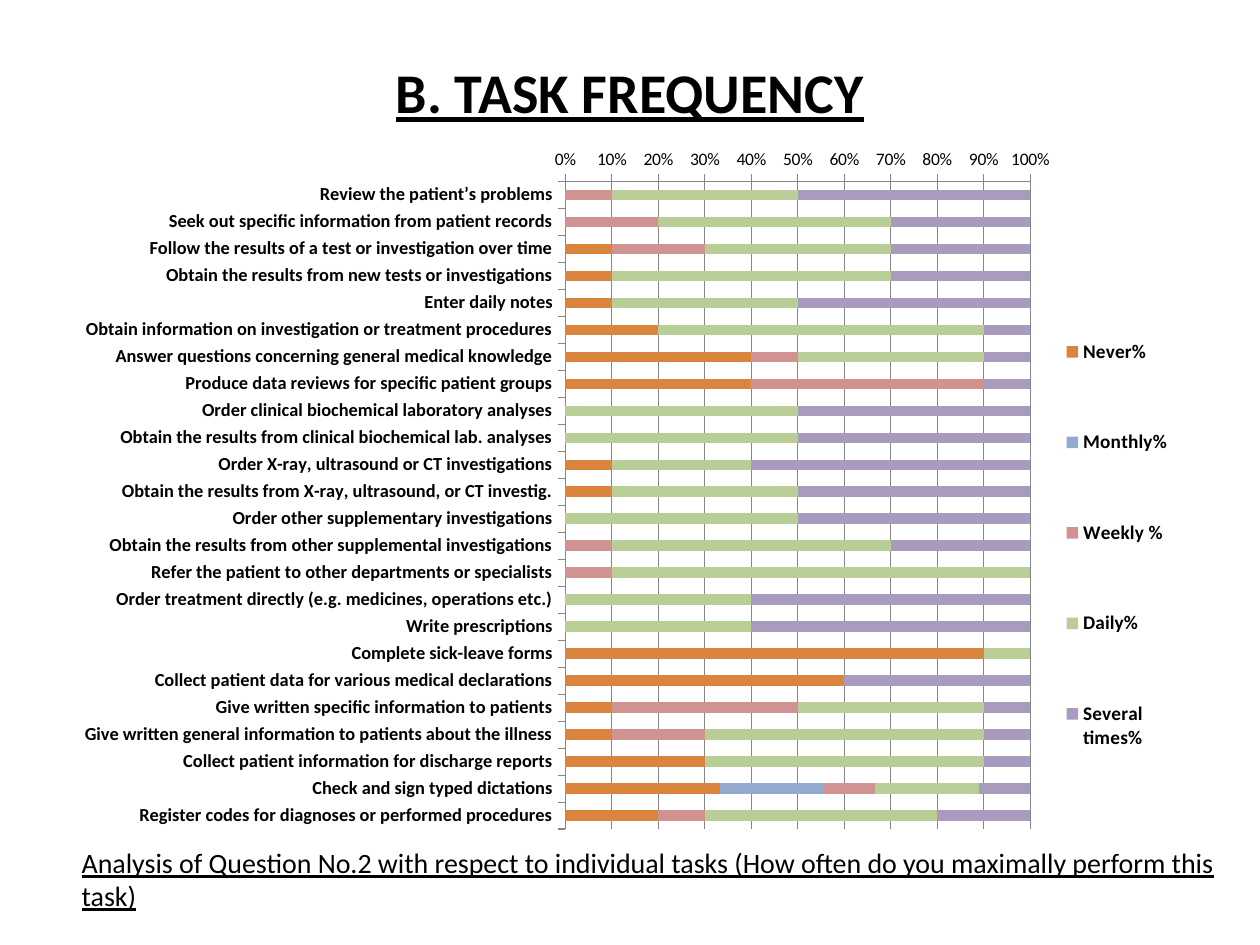
from pptx import Presentation
from pptx.chart.data import CategoryChartData as Data
from pptx.dml.color import RGBColor as Rgb
from pptx.enum.chart import XL_CHART_TYPE as Kind, XL_LEGEND_POSITION as Side, XL_TICK_MARK as Tick
from pptx.enum.text import MSO_ANCHOR as Anchor, PP_ALIGN as Align
from pptx.oxml import parse_xml
from pptx.util import Inches, Pt

TITLE = "B. TASK FREQUENCY"
NOTE = ("Analysis of Question No.2 with respect to individual tasks "
        "(How often do you maximally perform this task)")
LEVELS = ["Never%", "Monthly%", "Weekly %", "Daily%", "Several times%"]
TASKS = [
    ("Review the patient’s problems", 0, 0, 10, 40, 50),
    ("Seek out specific information from patient records", 0, 0, 20, 50, 30),
    ("Follow the results of a test or investigation over time", 10, 0, 20, 40, 30),
    ("Obtain the results from new tests or investigations", 10, 0, 0, 60, 30),
    ("Enter daily notes", 10, 0, 0, 40, 50),
    ("Obtain information on investigation or treatment procedures", 20, 0, 0, 70, 10),
    ("Answer questions concerning general medical knowledge", 40, 0, 10, 40, 10),
    ("Produce data reviews for specific patient groups", 40, 0, 50, 0, 10),
    ("Order clinical biochemical laboratory analyses", 0, 0, 0, 50, 50),
    ("Obtain the results from clinical biochemical lab. analyses", 0, 0, 0, 50, 50),
    ("Order X-ray, ultrasound or CT investigations", 10, 0, 0, 30, 60),
    ("Obtain the results from X-ray, ultrasound, or CT investig.", 10, 0, 0, 40, 50),
    ("Order other supplementary investigations", 0, 0, 0, 50, 50),
    ("Obtain the results from other supplemental investigations", 0, 0, 10, 60, 30),
    ("Refer the patient to other departments or specialists", 0, 0, 10, 90, 0),
    ("Order treatment directly (e.g. medicines, operations etc.)", 0, 0, 0, 40, 60),
    ("Write prescriptions", 0, 0, 0, 40, 60),
    ("Complete sick-leave forms", 90, 0, 0, 10, 0),
    ("Collect patient data for various medical declarations", 60, 0, 0, 0, 40),
    ("Give written specific information to patients", 10, 0, 40, 40, 10),
    ("Give written general information to patients about the illness", 10, 0, 20, 60, 10),
    ("Collect patient information for discharge reports", 30, 0, 0, 60, 10),
    ("Check and sign typed dictations", 33, 22, 11, 22, 11),
    ("Register codes for diagnoses or performed procedures", 20, 0, 10, 50, 20),
]
THEME = {
    "font": "Calibri", "ink": "000000", "line": "868686",
    "bars": ["DB843D", "93A9CF", "D19392", "B9CD96", "A99BBD"],
    "title": 32, "note": 16, "base": 10, "task": 10.5, "key": 11,
}
BOXES = {
    "title": (0.5, 0.3, 9, 0.85),
    "chart": (0.5, 1.07, 9, 5.63),
    "note": (0.55, 6.66, 9.37, 0.94),
}
PLOT = (4.49, 1.44, 3.69, 5.14)
KEY = (8.37, 2.17, 1, 4.31)
NS = "http://schemas.openxmlformats.org/drawingml/2006/chart"


def put(item, **vals):
    for name, val in vals.items():
        setattr(item, name, val)


def style(font, size, **vals):
    put(font, name=THEME["font"], size=Pt(THEME[size]), **vals)
    font.color.rgb = Rgb.from_string(THEME["ink"])


def write(slide, name, words, align, anchor, **vals):
    frame = slide.shapes.add_textbox(*map(Inches, BOXES[name])).text_frame
    put(frame, word_wrap=True, vertical_anchor=anchor)
    para = frame.paragraphs[0]
    para.alignment = align
    run = para.add_run()
    run.text = words
    style(run.font, name, underline=True, **vals)


def place(node, spot, box, inner=""):
    left, top, wide, high = BOXES["chart"]
    part = ((box[0] - left) / wide, (box[1] - top) / high, box[2] / wide, box[3] / high)
    tags = "".join(f'<c:{tag}Mode val="edge"/>' for tag in "xy")
    tags += "".join(f'<c:{tag} val="{val:.3f}"/>' for tag, val in zip("xywh", part))
    for old in node.findall(f"{{{NS}}}layout"):
        node.remove(old)
    node.insert(spot, parse_xml(
        f'<c:layout xmlns:c="{NS}"><c:manualLayout>{inner}{tags}</c:manualLayout></c:layout>'))


def draw(slide):
    data = Data(number_format="General")
    names, *cols = zip(*TASKS)
    data.categories = names
    for level, vals in zip(LEVELS, cols):
        data.add_series(level, vals)
    chart = slide.shapes.add_chart(
        Kind.BAR_STACKED_100, *map(Inches, BOXES["chart"]), data).chart
    put(chart, has_title=False, has_legend=True)
    style(chart.font, "base")
    plot = chart.plots[0]
    put(plot, gap_width=150, overlap=100, vary_by_categories=False)
    for bar, color in zip(plot.series, THEME["bars"]):
        bar.format.fill.solid()
        bar.format.fill.fore_color.rgb = Rgb.from_string(color)

    tasks, scale = chart.category_axis, chart.value_axis
    put(tasks, reverse_order=True, major_tick_mark=Tick.OUTSIDE)
    put(scale, has_major_gridlines=True, major_tick_mark=Tick.OUTSIDE, major_unit=0.1)
    put(scale.tick_labels, number_format="0%", number_format_is_linked=False)
    style(tasks.tick_labels.font, "task", bold=True)
    style(scale.tick_labels.font, "base", bold=False)
    for item in (tasks, scale, scale.major_gridlines):
        item.format.line.width = Pt(0.75)
        item.format.line.color.rgb = Rgb.from_string(THEME["line"])

    put(chart.legend, position=Side.RIGHT, include_in_layout=False)
    style(chart.legend.font, "key", bold=True)
    space = chart._chartSpace
    place(space.xpath("c:chart/c:plotArea")[0], 0, PLOT, '<c:layoutTarget val="inner"/>')
    place(space.xpath("c:chart/c:legend")[0], 1, KEY)


def main():
    """Build the task frequency slide."""
    deck = Presentation()
    put(deck, slide_width=Inches(10), slide_height=Inches(7.5))
    slide = deck.slides.add_slide(deck.slide_layouts[6])
    write(slide, "title", TITLE, Align.CENTER, Anchor.MIDDLE, bold=True)
    draw(slide)
    write(slide, "note", NOTE, Align.LEFT, Anchor.TOP)
    deck.save("out.pptx")


if __name__ == "__main__":
    main()
